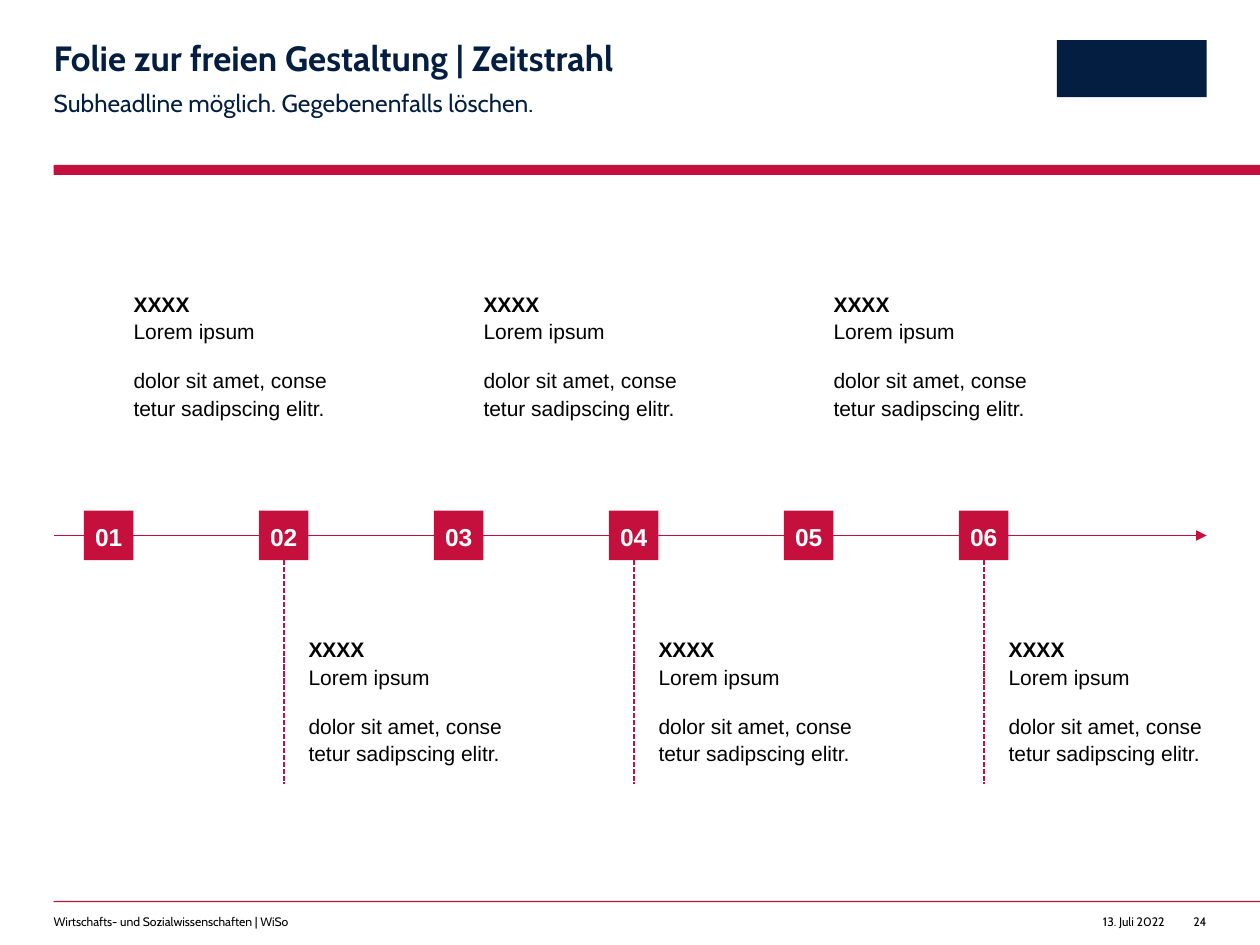
from copy import deepcopy
from dataclasses import dataclass

from pptx import Presentation
from pptx.dml.color import RGBColor
from pptx.enum.dml import MSO_LINE
from pptx.enum.shapes import MSO_CONNECTOR, MSO_SHAPE
from pptx.enum.text import MSO_ANCHOR, PP_ALIGN
from pptx.oxml.ns import qn
from pptx.util import Pt

RECT, STRAIGHT, DASH = MSO_SHAPE.RECTANGLE, MSO_CONNECTOR.STRAIGHT, MSO_LINE.SQUARE_DOT
LEFT, CENTER, RIGHT = PP_ALIGN.LEFT, PP_ALIGN.CENTER, PP_ALIGN.RIGHT
TOP, MIDDLE = MSO_ANCHOR.TOP, MSO_ANCHOR.MIDDLE


@dataclass(frozen=True)
class Theme:
    red: str = "C50F3C"
    navy: str = "041E42"
    black: str = "000000"
    white: str = "FFFFFF"
    heading_font: str = "Cabin"
    body_font: str = "Arial"
    title: float = 20
    subtitle: float = 14
    number: float = 14
    body: float = 12
    footer: float = 7


THEME = Theme()

TITLE = "Folie zur freien Gestaltung | Zeitstrahl"
SUBTITLE = "Subheadline möglich. Gegebenenfalls löschen."
# text, left, width, alignment, wraps
FOOTERS = [
    ("Wirtschafts- und Sozialwissenschaften | WiSo", 30.7, 323, LEFT, True),
    ("13. Juli 2022", 624.5, 41, RIGHT, False),
    ("24", 681.5, 8, RIGHT, False),
]
# number, heading, paragraphs; \v is a line break
MILESTONES = [
    (number, "XXXX", ["Lorem ipsum", "dolor sit amet, conse\vtetur sadipscing elitr."])
    for number in ("01", "02", "03", "04", "05", "06")
]

SLIDE_W, SLIDE_H = 720, 540
MARGIN, CONTENT_RIGHT = 30.7, 689.5
AXIS_Y = 306
FIRST_MARKER, STEP, MARKER = 48, 100, 28.3
UPPER_TEXT, LOWER_TEXT = 165, 362.5
NOTE_W, NOTE_H = 111.6, 75
GUIDE_END = 448


def rgb(value):
    return RGBColor.from_string(value)


def add_block(slide, left, top, width, height, color):
    block = slide.shapes.add_shape(RECT, Pt(left), Pt(top), Pt(width), Pt(height))
    block.shadow.inherit = False
    block.fill.solid()
    block.fill.fore_color.rgb = rgb(color)
    block.line.fill.background()
    return block


def add_line(slide, x1, y1, x2, y2):
    line = slide.shapes.add_connector(STRAIGHT, Pt(x1), Pt(y1), Pt(x2), Pt(y2))
    line.line.color.rgb = rgb(THEME.red)
    line.line.width = Pt(1)
    properties = line._element.spPr
    properties.append(properties.makeelement(qn("a:effectLst"), {}))
    return line


def write(shape, paragraphs, size, color, font, bold=False, align=LEFT,
          anchor=TOP, spacing=1.0, after=0, wrap=True):
    frame = shape.text_frame
    frame.margin_left = frame.margin_top = frame.margin_right = frame.margin_bottom = 0
    frame.word_wrap = wrap
    frame.vertical_anchor = anchor
    frame.text = "\n".join(paragraphs)
    for paragraph in frame.paragraphs:
        paragraph.alignment = align
        paragraph.line_spacing = spacing
        paragraph.space_after = Pt(after)
        for run in paragraph.runs:
            run.font.size = Pt(size)
            run.font.name = font
            run.font.bold = bold
            run.font.color.rgb = rgb(color)
        # Line breaks need the run's size too, or they stretch their line.
        for line_break in paragraph._p.findall(qn("a:br")):
            line_break.append(deepcopy(paragraph.runs[0]._r.rPr))
    return frame


def add_text(slide, left, top, width, height, paragraphs, *style, **options):
    box = slide.shapes.add_textbox(Pt(left), Pt(top), Pt(width), Pt(height))
    return write(box, paragraphs, *style, **options)


def add_header_and_footer(slide):
    add_block(slide, MARGIN, 94.3, SLIDE_W - MARGIN, 5.6, THEME.red)
    add_block(slide, MARGIN, 514.8, SLIDE_W - MARGIN, 0.7, THEME.red)
    add_block(slide, 604, 23, 85.5, 32.5, THEME.navy)  # logo placeholder
    add_text(slide, MARGIN, 23.8, 404, 21.6, [TITLE], THEME.title, THEME.navy,
             THEME.heading_font, bold=True, spacing=0.9)
    add_text(slide, MARGIN, 48.5, 404, 17.3, [SUBTITLE], THEME.subtitle, THEME.navy,
             THEME.heading_font, spacing=1.1, after=8)
    for text, left, width, align, wrap in FOOTERS:
        add_text(slide, left, 522.7, width, 8.6, [text], THEME.footer, THEME.black,
                 THEME.heading_font, align=align, wrap=wrap)


def add_timeline(slide):
    axis = add_line(slide, MARGIN, AXIS_Y, CONTENT_RIGHT, AXIS_Y)
    outline = axis.line._get_or_add_ln()
    outline.append(outline.makeelement(qn("a:tailEnd"), {"type": "triangle"}))

    for index, (number, heading, (lead, detail)) in enumerate(MILESTONES):
        left = FIRST_MARKER + index * STEP
        below = index % 2 == 1
        marker = add_block(slide, left, AXIS_Y - MARKER / 2, MARKER, MARKER, THEME.red)
        write(marker, [number], THEME.number, THEME.white, THEME.body_font, bold=True,
              align=CENTER, anchor=MIDDLE, spacing=1.1, after=12)
        note = add_text(slide, left + MARKER, LOWER_TEXT if below else UPPER_TEXT,
                        NOTE_W, NOTE_H, [f"{heading}\v{lead}", detail], THEME.body,
                        THEME.black, THEME.body_font, spacing=1.1, after=12, wrap=False)
        note.paragraphs[0].runs[0].font.bold = True
        if below:
            center = left + MARKER / 2
            guide = add_line(slide, center, AXIS_Y + MARKER / 2, center, GUIDE_END)
            guide.line.dash_style = DASH


def main():
    presentation = Presentation()
    presentation.slide_width, presentation.slide_height = Pt(SLIDE_W), Pt(SLIDE_H)
    slide = presentation.slides.add_slide(presentation.slide_layouts[6])
    add_header_and_footer(slide)
    add_timeline(slide)
    presentation.save("out.pptx")


if __name__ == "__main__":
    main()
